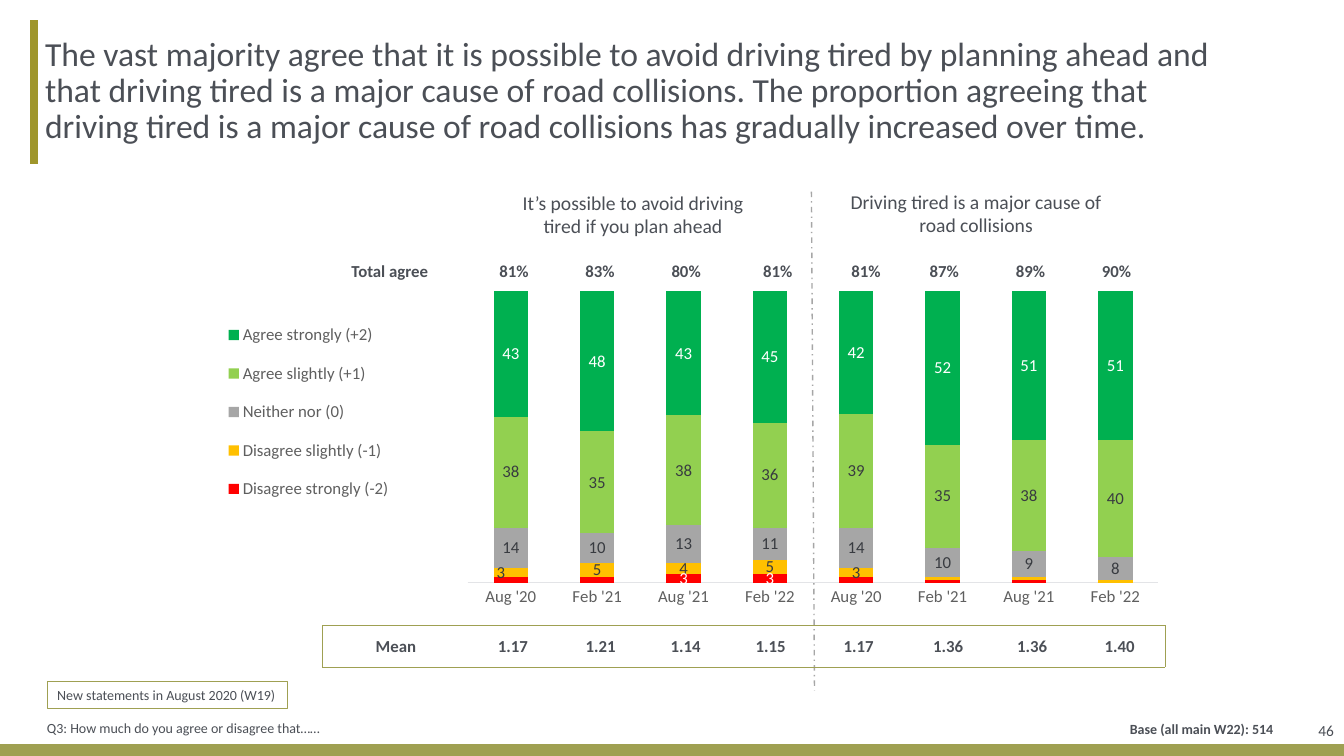
from lxml.etree import SubElement
from pptx import Presentation
from pptx.chart.data import CategoryChartData
from pptx.dml.color import RGBColor
from pptx.enum.chart import XL_CHART_TYPE, XL_LEGEND_POSITION, XL_TICK_LABEL_POSITION, XL_TICK_MARK
from pptx.enum.dml import MSO_LINE
from pptx.enum.shapes import MSO_CONNECTOR, MSO_SHAPE
from pptx.enum.text import MSO_ANCHOR, PP_ALIGN
from pptx.oxml import parse_xml
from pptx.oxml.ns import nsdecls, qn
from pptx.util import Pt

LEFT, MID, RIGHT = PP_ALIGN.LEFT, PP_ALIGN.CENTER, PP_ALIGN.RIGHT
TOP, CENTER = MSO_ANCHOR.TOP, MSO_ANCHOR.MIDDLE
OLIVE, SLATE, GREY = "9FA052", "4B4F56", "5F5F5F"
ink = RGBColor.from_string


def write(frame, text, size=12, bold=False, align=LEFT, anchor=TOP, space=None):
    frame.word_wrap = True
    frame.vertical_anchor = anchor
    para = frame.paragraphs[0]
    para.alignment = align
    para.line_spacing = space
    run = para.add_run()
    run.text = text
    style(run.font, size, SLATE)
    run.font.bold = bold


def style(font, size, color):
    font.name = "Calibri"
    font.size = Pt(size)
    font.color.rgb = ink(color)


deck = Presentation()
deck.slide_width, deck.slide_height = Pt(960), Pt(540)
slide = deck.slides.add_slide(deck.slide_layouts[6])
shapes = slide.shapes

bar = shapes.add_shape(MSO_SHAPE.RECTANGLE, Pt(0), Pt(531.5), Pt(960), Pt(8.5))
bar.shadow.inherit = False
bar.fill.solid()
bar.fill.fore_color.rgb = ink(OLIVE)
bar.line.fill.background()

data = CategoryChartData(number_format="#,##0")
data.categories = ["Feb '22", "Aug '21", "Feb '21", "Aug '20"] * 2
scale = [
    ("Disagree strongly (-2)", [0, 1, 1, 2, 3, 3, 2, 2], "FF0000", "FFFFFF", [0, 1, 2, 3, 6, 7]),
    ("Disagree slightly (-1)", [1, 1, 1, 3, 5, 4, 5, 3], "FFC000", "383B40", [0, 1, 2]),
    ("Neither nor (0)", [8, 9, 10, 14, 11, 13, 10, 14], "A6A6A6", "383B40", []),
    ("Agree slightly (+1)", [40, 38, 35, 39, 36, 38, 35, 38], "92D050", "383B40", []),
    ("Agree strongly (+2)", [51, 51, 52, 42, 45, 43, 48, 43], "00B050", "FFFFFF", []),
]
for name, vals, *rest in scale:
    data.add_series(name, vals)
chart = shapes.add_chart(XL_CHART_TYPE.COLUMN_STACKED_100, Pt(128.2), Pt(117.4),
                         Pt(710), Pt(327.6), data).chart
chart.has_title = False
style(chart.font, 12, GREY)
chart.has_legend = True
legend = chart.legend
legend.position = XL_LEGEND_POSITION.LEFT
legend.include_in_layout = False
style(legend.font, 12, GREY)

months = chart.category_axis
months.reverse_order = True
months.major_tick_mark = XL_TICK_MARK.NONE
months.format.line.color.rgb = ink("E3E4E7")
months.format.line.width = Pt(0.75)
style(months.tick_labels.font, 12, GREY)
share = chart.value_axis
share.has_major_gridlines = False
share.major_tick_mark = XL_TICK_MARK.NONE
share.tick_label_position = XL_TICK_LABEL_POSITION.NONE
share.format.line.fill.background()

plot = chart.plots[0]
plot.gap_width, plot.overlap = 150, 100
for series, (name, vals, color, tint, hidden) in zip(plot.series, scale):
    series.format.fill.solid()
    series.format.fill.fore_color.rgb = ink(color)
    labels = series.data_labels
    labels.show_value = True
    labels.number_format = "#,##0"
    labels.number_format_is_linked = False
    style(labels.font, 12, tint)
    for spot, idx in enumerate(hidden):
        labels._element.insert(spot, parse_xml(
            f'<c:dLbl {nsdecls("c")}><c:idx val="{idx}"/><c:delete val="1"/></c:dLbl>'))

moved = plot.series[1].points[7].data_label
style(moved.font, 12, "383B40")
nudge = plot.series[1].data_labels._element.findall(qn("c:dLbl"))[-1]
area = chart._chartSpace.chart.plotArea
for old in area.findall(qn("c:layout")):
    area.remove(old)
for old in legend._element.findall(qn("c:layout")):
    legend._element.remove(old)
for node, spot, inner, box in [
    (area, 0, True, {"x": 0.29, "y": 0.277, "w": 0.695, "h": 0.636}),
    (legend._element, 1, False, {"x": 0.03, "y": 0.31, "w": 0.2, "h": 0.46}),
    (nudge, 1, False, {"x": -0.01, "y": 0}),
]:
    layout = parse_xml(f'<c:layout {nsdecls("c")}><c:manualLayout/></c:layout>')
    manual = layout[0]
    if inner:
        SubElement(manual, qn("c:layoutTarget"), val="inner")
    if node is not nudge:
        for key in "xy":
            SubElement(manual, qn(f"c:{key}Mode"), val="edge")
    for key, part in box.items():
        SubElement(manual, qn(f"c:{key}"), val=str(part))
    node.insert(spot, layout)

title = ("The vast majority agree that it is possible to avoid driving tired by planning ahead and "
         "that driving tired is a major cause of road collisions. The proportion agreeing that "
         "driving tired is a major cause of road collisions has gradually increased over time.")
head = shapes.add_textbox(Pt(26.5), Pt(14.4), Pt(839), Pt(102)).text_frame
head.margin_left = Pt(5.75)
head.margin_top = head.margin_right = head.margin_bottom = 0
write(head, title, size=24, anchor=CENTER, space=0.9)

for text, x, y, w, h, form in [
    ("46", 894, 500.5, 66, 42, {"size": 11, "align": RIGHT, "anchor": CENTER}),
    ("Q3: How much do you agree or disagree that……", 26.5, 510.5, 681, 19.4,
     {"size": 10, "anchor": CENTER}),
    ("Base (all main W22): 514", 633, 511, 283.5, 23, {"size": 10, "bold": True, "align": RIGHT}),
    ("It’s possible to avoid driving tired if you plan ahead", 354, 132.5, 196.5, 41,
     {"size": 14, "align": MID}),
    ("Driving tired is a major cause of road collisions", 599, 131.8, 196.5, 41,
     {"size": 14, "align": MID}),
]:
    write(shapes.add_textbox(Pt(x), Pt(y), Pt(w), Pt(h)).text_frame, text, **form)

note = shapes.add_shape(MSO_SHAPE.RECTANGLE, Pt(33.8), Pt(486.7), Pt(171.4), Pt(19.4))
note.shadow.inherit = False
note.fill.background()
note.line.color.rgb = ink(OLIVE)
note.line.width = Pt(0.75)
write(note.text_frame, "New statements in August 2020 (W19)", size=10)

for x1, y1, x2, y2, color, width, dash in [
    (24.5, 14.4, 24.5, 117.4, "9F962B", 6, None),
    (579.6, 136.8, 581.8, 493.2, "A6A6A6", 1, MSO_LINE.DASH_DOT),
]:
    rule = shapes.add_connector(MSO_CONNECTOR.STRAIGHT, Pt(x1), Pt(y1), Pt(x2), Pt(y2))
    rule.line.color.rgb = ink(color)
    rule.line.width = Pt(width)
    rule.line.dash_style = dash
    SubElement(rule._element.spPr, qn("a:effectLst"))

for x, y, widths, texts, pads, framed in [
    (219, 179.3, [116] + [61.5] * 8,
     ["Total agree", "81%", "83%", "80%", "81%", "81%", "87%", "89%", "90%"],
     {4: 8, 5: 11}, False),
    (230.4, 447, [102, 65, 60.5, 61, 60.5, 65, 63, 57, 68],
     ["Mean", "1.17", "1.21", "1.14", "1.15", "1.17", "1.36", "1.36", "1.40"], {}, True),
]:
    table = shapes.add_table(1, 9, Pt(x), Pt(y), Pt(sum(widths)), Pt(29.5)).table
    table.first_row = table.horz_banding = False
    table._tbl.tblPr.find(qn("a:tableStyleId")).text = "{2D5ABB26-0587-4C30-8999-92F81FD0307C}"
    for col, (width, text) in enumerate(zip(widths, texts)):
        table.columns[col].width = Pt(width)
        cell = table.cell(0, col)
        cell.margin_left, cell.margin_right = Pt(8.6 + pads.get(col, 0)), Pt(5.8)
        cell.margin_top = cell.margin_bottom = 0
        cell.vertical_anchor = CENTER
        write(cell.text_frame, text, bold=True, align=MID, anchor=None)
        sides = {0: "LTB", 8: "RTB"}.get(col, "TB") if framed else ""
        for side in sides:
            edge = SubElement(cell._tc.get_or_add_tcPr(), qn(f"a:ln{side}"), w=str(Pt(0.5)))
            SubElement(SubElement(edge, qn("a:solidFill")), qn("a:srgbClr"), val=OLIVE)
        cell.fill.background()

deck.save("out.pptx")
